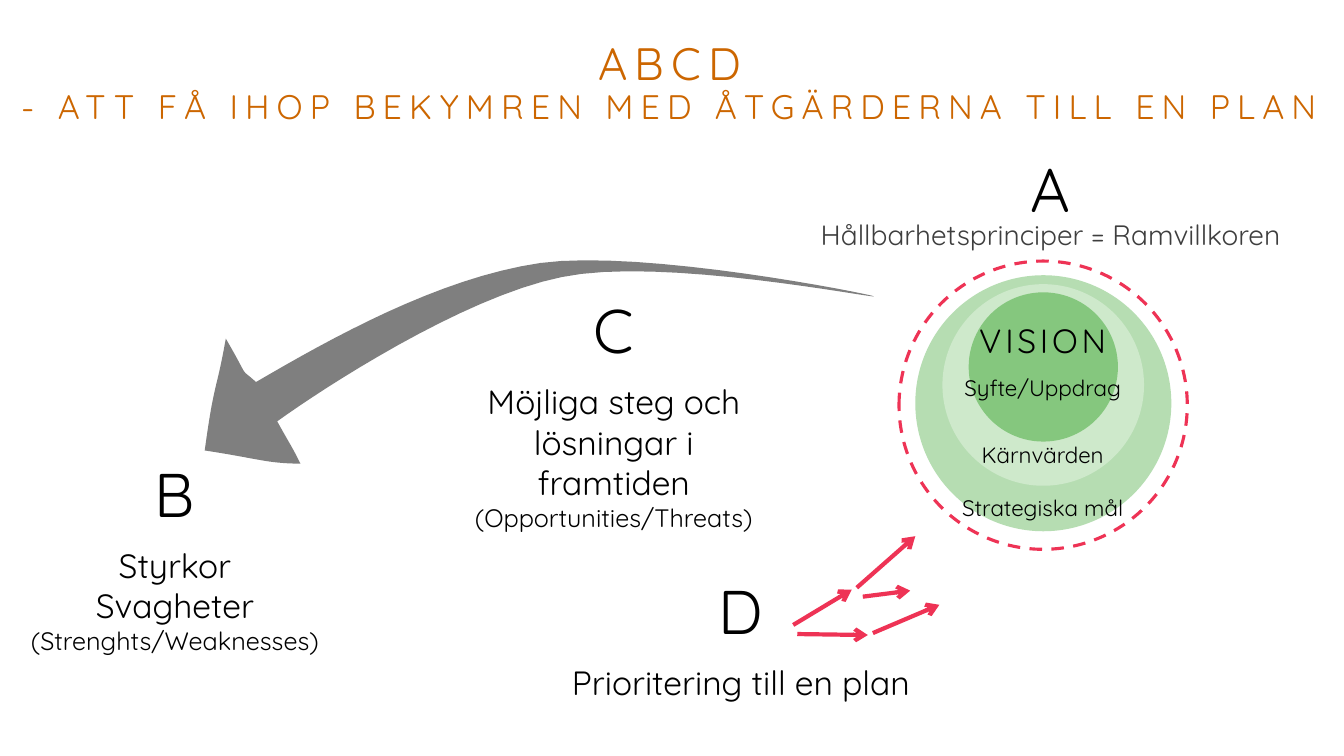
from pptx import Presentation
from pptx.dml.color import RGBColor
from pptx.enum.dml import MSO_LINE_DASH_STYLE as Dash
from pptx.enum.shapes import MSO_CONNECTOR as Connector, MSO_SHAPE as Shape
from pptx.enum.text import MSO_ANCHOR as Anchor, PP_ALIGN as Align
from pptx.oxml.ns import qn
from pptx.util import Pt
from lxml.etree import SubElement

ORANGE, BLACK, DARK, GREY, RED = "CC6600", "000000", "3E3E3E", "7F7F7F", "EE3355"


def colour(value):
    return RGBColor.from_string(value)


def curve(start, control_one, control_two, end, steps=16):
    points = []
    for step in range(1, steps + 1):
        t = step / steps
        u = 1 - t
        weights = (u ** 3, 3 * u * u * t, 3 * u * t * t, t ** 3)
        corners = (start, control_one, control_two, end)
        points.append(tuple(sum(w * c[axis] for w, c in zip(weights, corners)) for axis in (0, 1)))
    return points


class SlideBuilder:
    font_name = "Quicksand"

    def __init__(self, page):
        self.page = page
        self.shapes = page.shapes

    def fill_text(self, box, lines, text_colour, line_spacing=None):
        frame = box.text_frame
        frame.word_wrap = True
        frame.margin_left = frame.margin_right = frame.margin_top = frame.margin_bottom = 0
        for index, (text, size, before, tracking) in enumerate(lines):
            para = frame.paragraphs[0] if index == 0 else frame.add_paragraph()
            para.text = text
            para.alignment = Align.CENTER
            para.space_before = Pt(before)
            if line_spacing:
                para.line_spacing = line_spacing
            font = para.font
            font.name, font.size = self.font_name, Pt(size)
            font.color.rgb = colour(text_colour)
            font._rPr.set("spc", str(round(tracking * 100)))
        return frame

    def title(self, left, top, width, height, lines):
        box = self.shapes.title
        box.left, box.top, box.width, box.height = Pt(left), Pt(top), Pt(width), Pt(height)
        self.fill_text(box, lines, ORANGE, 0.9).vertical_anchor = Anchor.BOTTOM

    def text(self, left, top, width, height, lines, text_colour=BLACK):
        box = self.shapes.add_textbox(Pt(left), Pt(top), Pt(width), Pt(height))
        self.fill_text(box, lines, text_colour).vertical_anchor = Anchor.TOP

    def circle(self, left, top, size, fill=None):
        shape = self.shapes.add_shape(Shape.OVAL, Pt(left), Pt(top), Pt(size), Pt(size))
        shape.shadow.inherit = False
        if fill:
            shape.fill.solid()
            shape.fill.fore_color.rgb = colour(fill)
            shape.line.fill.background()
        else:
            shape.fill.background()
            shape.line.color.rgb = colour(RED)
            shape.line.width = Pt(2.25)
            shape.line.dash_style = Dash.DASH

    def arrow(self, start, end):
        line = self.shapes.add_connector(Connector.STRAIGHT, *map(Pt, start + end))
        line.line.color.rgb = colour(RED)
        line.line.width = Pt(3)
        SubElement(line.line._get_or_add_ln(), qn("a:tailEnd"), type="arrow")
        SubElement(line._element.spPr, qn("a:effectLst"))

    def curved_outline(self, start, curves, fill):
        builder = self.shapes.build_freeform(Pt(start[0]), Pt(start[1]), scale=1.0)
        current = start
        for segment in curves:
            points = curve(current, *segment)
            builder.add_line_segments([(Pt(x), Pt(y)) for x, y in points], close=False)
            current = segment[-1]
        builder.add_line_segments([(Pt(start[0]), Pt(start[1]))], close=True)
        shape = builder.convert_to_shape()
        shape.shadow.inherit = False
        shape.fill.solid()
        shape.fill.fore_color.rgb = colour(fill)
        shape.line.fill.background()


def main():
    deck = Presentation()
    deck.slide_width, deck.slide_height = Pt(960), Pt(540)
    slide = SlideBuilder(deck.slides.add_slide(deck.slide_layouts[5]))

    slide.title(5.8, -10, 945, 100.7, [
        ("ABCD", 32.4, 0, 5.1),
        ("- ATT FÅ IHOP BEKYMREN MED ÅTGÄRDERNA TILL EN PLAN", 24.3, 0, 5.1),
    ])

    slide.circle(653.8, 196.6, 182.9, "B6DDB2")
    slide.circle(673.2, 203, 144, "CEE9CB")
    slide.circle(642.2, 186.5, 205.9)
    slide.circle(691.9, 208.8, 106.6, "85C77E")

    slide.text(579, 155.5, 343, 25, [("Hållbarhetsprinciper = Ramvillkoren", 20, 0, 0)], DARK)
    slide.text(681.8, 228.5, 126, 160, [
        ("VISION", 24, 0, 2.7),
        ("Syfte/Uppdrag", 16, 9.6, 0),
        ("Kärnvärden", 16, 28.8, 0),
        ("Strategiska mål", 16, 19.2, 0),
    ])
    slide.text(687.6, 108, 126, 55, [("A", 44, 0, 2.7)])
    slide.text(11.5, 325.4, 226.8, 150, [
        ("B", 44, 0, 2.7),
        ("Styrkor", 24, 10.8, 0),
        ("Svagheter", 24, 0, 0),
        ("(Strenghts/Weaknesses)", 18, 0, 0),
    ])
    slide.text(331.9, 208.8, 213.1, 180, [
        ("C", 44, 0, 2.7),
        ("Möjliga steg och lösningar i framtiden", 24, 10.8, 0),
        ("(Opportunities/Threats)", 18, 0, 0),
    ])
    slide.text(401, 409, 256.4, 100, [
        ("D", 44, 0, 2.7),
        ("Prioritering till en plan", 24, 10.8, 0),
    ])

    plan_steps = [
        ((566.6, 446.4), (608.4, 421.2)),
        ((612, 419.8), (653.8, 383)),
        ((616.3, 426.2), (650.2, 421.9)),
        ((569.5, 452.9), (619.9, 453.6)),
        ((623.5, 452.2), (671, 432)),
    ]
    for start, end in plan_steps:
        slide.arrow(start, end)

    slide.curved_outline((624.2, 211.7), [
        ((622.1, 210.2), (459.4, 177.8), (385.9, 187.9)),
        ((312.5, 198.7), (236.2, 241.9), (182.9, 272.9)),
        ((169.9, 261.4), (179.3, 272.9), (161.3, 241.9)),
        ((154.1, 282.2), (153.4, 270), (146.2, 321.8)),
        ((184.3, 327.6), (191.5, 331.2), (214.6, 331.2)),
        ((208.1, 318.2), (208.8, 320.4), (198, 301)),
        ((229, 278.6), (329.8, 212.4), (401, 198)),
        ((471.6, 182.9), (627.1, 213.8), (624.2, 211.7)),
    ], GREY)

    deck.save("out.pptx")


if __name__ == "__main__":
    main()
